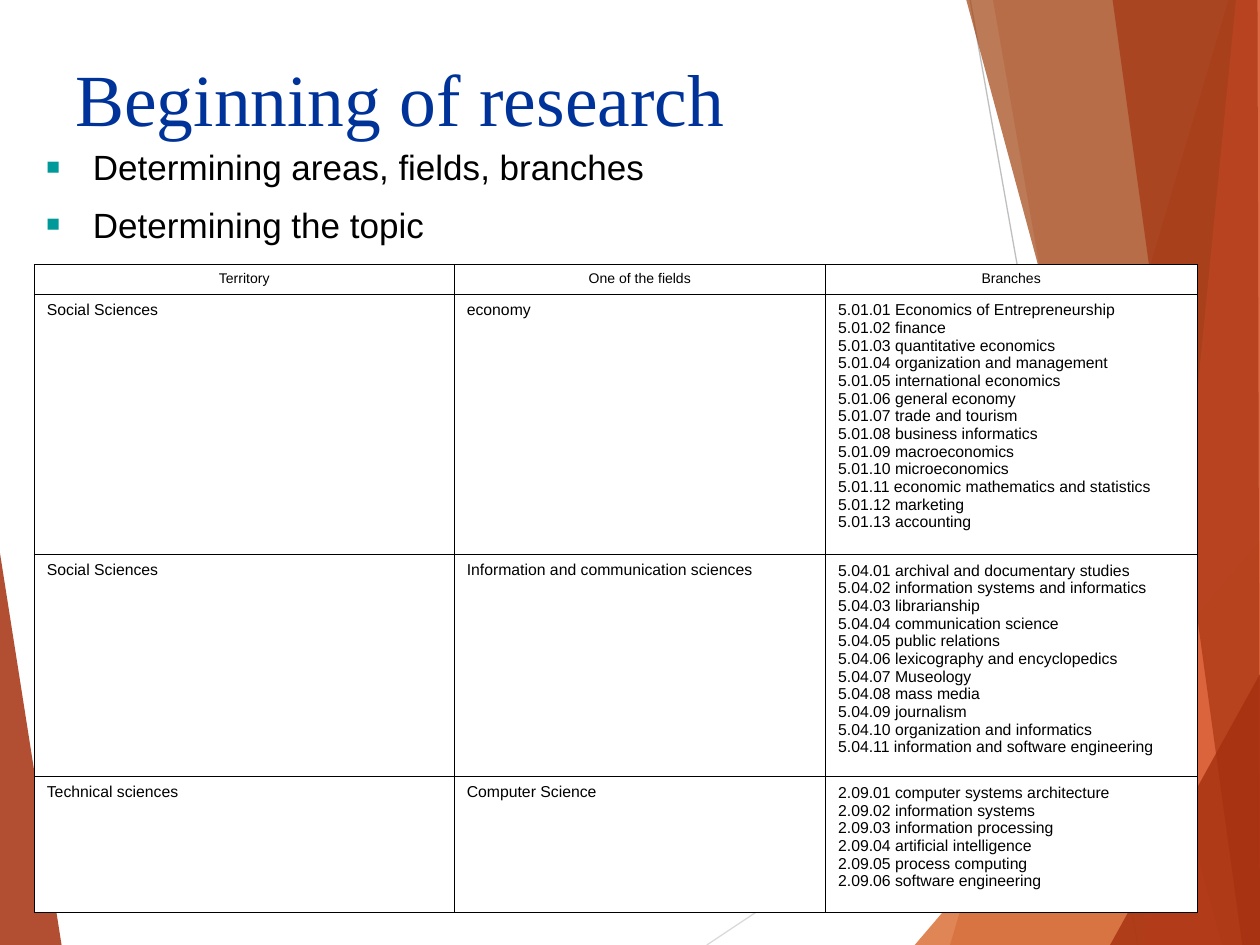
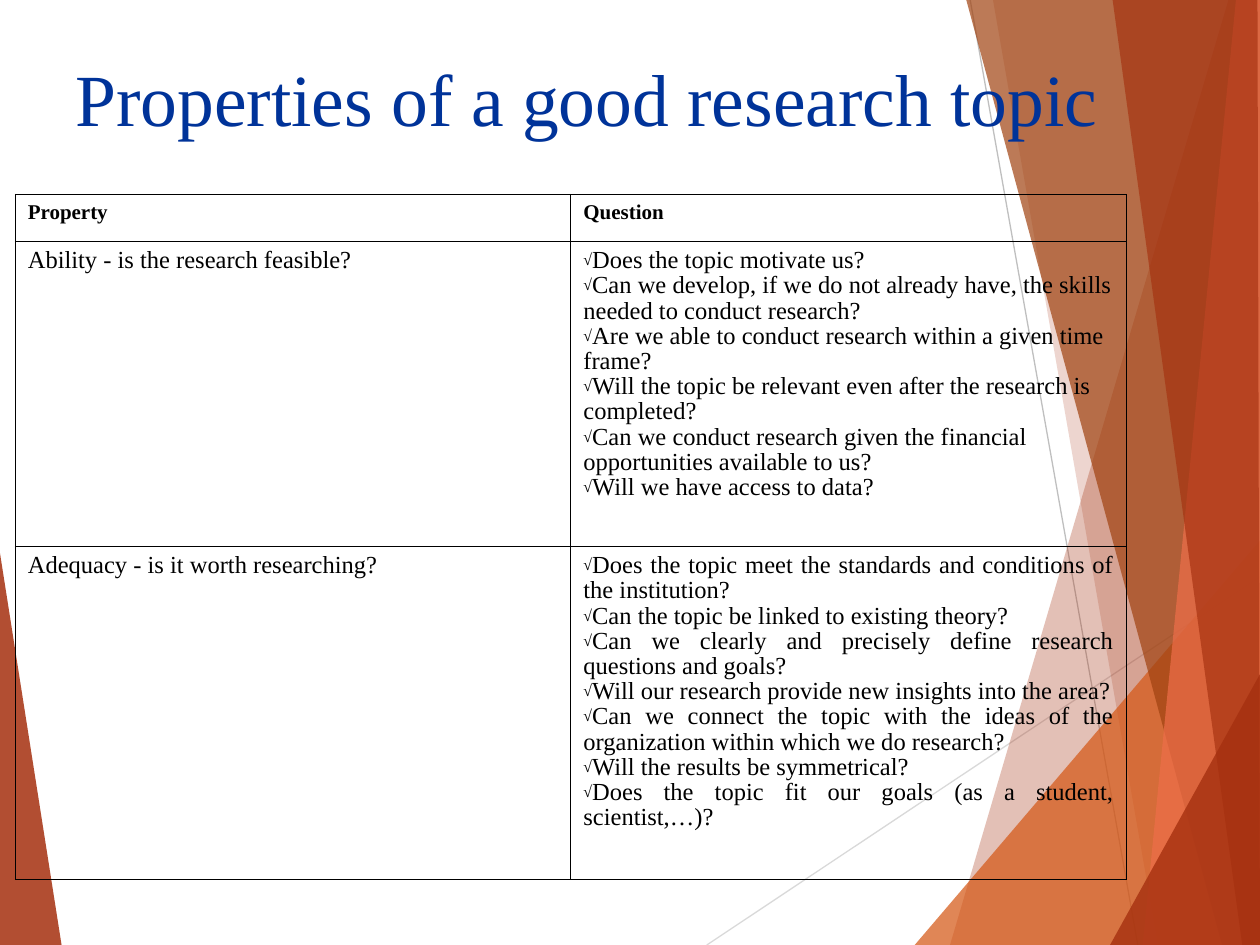
from dataclasses import dataclass, field, replace

from lxml.etree import SubElement
from pptx import Presentation
from pptx.dml.color import RGBColor
from pptx.enum.shapes import MSO_CONNECTOR as Connector
from pptx.enum.text import MSO_ANCHOR as Anchor, PP_ALIGN as Align
from pptx.oxml import parse_xml
from pptx.oxml.ns import nsdecls, qn
from pptx.slide import Slide
from pptx.util import Pt

WIDTH, HEIGHT = 720, 540
BLACK, WHITE, NAVY, TEAL = "000000", "FFFFFF", "003399", "009999"
RUST, ORANGE, BROWN, CORAL = "A5300F", "D55816", "A04210", "EE6E4A"
SANS, SERIF = "Arial", "Times New Roman"
BORDER = 0.45


@dataclass(frozen=True)
class Facet:
    points: tuple[tuple[float, float], ...]
    color: str
    opacity: int


@dataclass(frozen=True)
class Ray:
    start: tuple[float, float]
    end: tuple[float, float]
    color: str


@dataclass(frozen=True)
class Bullet:
    char: str
    color: str
    font: str
    indent: float = 0


@dataclass(frozen=True)
class Style:
    font: dict
    color: str = BLACK
    para: dict = field(default_factory=dict)
    bullet: Bullet | None = None


@dataclass(frozen=True)
class Cell:
    lines: list[str]
    style: Style


@dataclass(frozen=True)
class Grid:
    left: float
    top: float
    widths: list[float]
    heights: list[float]
    rows: list[list[Cell]]
    fill: str | None = None


def right_band(top_x: float, bottom_x: float) -> tuple[tuple[float, float], ...]:
    return (top_x, 0), (bottom_x, HEIGHT), (WIDTH, HEIGHT), (WIDTH, 0)


def right_corner(x: float, y: float) -> tuple[tuple[float, float], ...]:
    return (x, HEIGHT), (WIDTH, y), (WIDTH, HEIGHT)


BACKDROP = [
    Facet(((0, 316), (35.2, HEIGHT), (0, HEIGHT)), RUST, 85),
    Ray((403.9, HEIGHT), (WIDTH, 329.5), "D9D9D9"),
    Ray((554.4, 0), (650.2, HEIGHT), "BFBFBF"),
    Facet(right_band(702, 542.9), RUST, 30),
    Facet(right_band(567.4, 661.7), RUST, 20),
    Facet(right_corner(522.7, 308.9), ORANGE, 72),
    Facet(right_band(552.2, 698.4), BROWN, 70),
    Facet(right_band(706.3, 653), CORAL, 70),
    Facet(((635.8, 0), (709.9, HEIGHT), (WIDTH, HEIGHT), (718.6, 0)), RUST, 65),
    Facet(right_corner(634.3, 385.2), RUST, 80),
]

TITLE = Style({"name": SERIF, "size": Pt(42)}, NAVY)
POINT = Style({"name": SANS, "size": Pt(20)}, para={"space_before": Pt(9)},
              bullet=Bullet("■", TEAL, SANS, 26.64))

BRANCH = Style({"name": SANS, "size": Pt(9)})
AREA = replace(BRANCH, para={"line_spacing": 0.94})
AREA_HEAD = Style({"name": SANS, "size": Pt(8)},
                  para={"line_spacing": 0.94, "alignment": Align.CENTER})

JUSTIFIED = {"line_spacing": 0.93, "alignment": Align.JUSTIFY}
PROPERTY = Style({"name": SERIF, "size": Pt(14)}, para=JUSTIFIED)
PROPERTY_HEAD = Style({"name": SERIF, "size": Pt(12), "bold": True}, para=JUSTIFIED)
QUESTION = replace(PROPERTY, bullet=Bullet("√", BLACK, SERIF))
QUESTION_LEFT = replace(QUESTION, para={"line_spacing": 0.93})

AREAS = [
    ("Social Sciences", "economy", "5.01", [
        "Economics of Entrepreneurship", "finance", "quantitative economics",
        "organization and management", "international economics",
        "general economy", "trade and tourism", "business informatics",
        "macroeconomics", "microeconomics",
        "economic mathematics and statistics", "marketing", "accounting"]),
    ("Social Sciences", "Information and communication sciences", "5.04", [
        "archival and documentary studies",
        "information systems and informatics", "librarianship",
        "communication science", "public relations",
        "lexicography and encyclopedics", "Museology", "mass media",
        "journalism", "organization and informatics",
        "information and software engineering"]),
    ("Technical sciences", "Computer Science", "2.09", [
        "computer systems architecture", "information systems",
        "information processing", "artificial intelligence",
        "process computing", "software engineering"]),
]

PROPERTIES = [
    ("Ability - is the research feasible?", QUESTION_LEFT, [
        "Does the topic motivate us?",
        "Can we develop, if we do not already have, the skills needed to conduct research?",
        "Are we able to conduct research within a given time frame?",
        "Will the topic be relevant even after the research is completed?",
        "Can we conduct research given the financial opportunities available to us?",
        "Will we have access to data?"]),
    ("Adequacy - is it worth researching?", QUESTION, [
        "Does the topic meet the standards and conditions of the institution?",
        "Can the topic be linked to existing theory?",
        "Can we clearly and precisely define research questions and goals?",
        "Will our research provide new insights into the area?",
        "Can we connect the topic with the ideas of the organization within which we do research?",
        "Will the results be symmetrical?",
        "Does the topic fit our goals (as a student, scientist,…)?"]),
]


def rgb(color: str) -> RGBColor:
    return RGBColor.from_string(color)


def set_all(target, values: dict) -> None:
    for name, value in values.items():
        setattr(target, name, value)


def draw_facet(s: Slide, facet: Facet) -> None:
    first, *rest = [(Pt(x), Pt(y)) for x, y in facet.points]
    builder = s.shapes.build_freeform(*first)
    builder.add_line_segments(rest, close=True)
    sp = builder.convert_to_shape()
    sp.shadow.inherit = False
    sp.line.fill.background()
    sp.fill.solid()
    sp.fill.fore_color.rgb = rgb(facet.color)
    color = sp.fill._xPr.find(f".//{qn('a:srgbClr')}")
    SubElement(color, qn("a:alpha"), val=str(facet.opacity * 1000))


def draw_ray(s: Slide, ray: Ray) -> None:
    ends = [Pt(v) for v in (*ray.start, *ray.end)]
    sp = s.shapes.add_connector(Connector.STRAIGHT, *ends)
    sp.line.width = Pt(0.75)
    sp.line.color.rgb = rgb(ray.color)
    SubElement(sp._element.spPr, qn("a:effectLst"))


def add_bullet(p, bullet: Bullet) -> None:
    pPr = p._p.get_or_add_pPr()
    pPr.set("marL", str(Pt(bullet.indent)))
    pPr.set("indent", str(-Pt(bullet.indent)))
    color = SubElement(pPr, qn("a:buClr"))
    SubElement(color, qn("a:srgbClr"), val=bullet.color)
    SubElement(pPr, qn("a:buSzPct"), val="65000")
    SubElement(pPr, qn("a:buFont"), typeface=bullet.font)
    SubElement(pPr, qn("a:buChar"), char=bullet.char)


def write(tf, lines: list[str], style: Style) -> None:
    for i, line in enumerate(lines):
        p = tf.add_paragraph() if i else tf.paragraphs[0]
        set_all(p, style.para)
        if style.bullet:
            add_bullet(p, style.bullet)
        r = p.add_run()
        r.text = line
        set_all(r.font, style.font)
        r.font.color.rgb = rgb(style.color)


def add_text(s: Slide, box: tuple[float, ...], inset_top: float,
             lines: list[str], style: Style) -> None:
    tf = s.shapes.add_textbox(*[Pt(v) for v in box]).text_frame
    set_all(tf, {"word_wrap": True, "margin_top": Pt(inset_top),
                 "vertical_anchor": Anchor.TOP})
    write(tf, lines, style)


def add_borders(cell) -> None:
    tcPr = cell._tc.get_or_add_tcPr()
    for i, side in enumerate("LRTB"):
        tcPr.insert(i, parse_xml(
            f'<a:ln{side} {nsdecls("a")} w="{Pt(BORDER)}"><a:solidFill>'
            f'<a:srgbClr val="{BLACK}"/></a:solidFill></a:ln{side}>'))


def add_grid(s: Slide, grid: Grid) -> None:
    frame = s.shapes.add_table(
        len(grid.rows), len(grid.widths), Pt(grid.left), Pt(grid.top),
        Pt(sum(grid.widths)), Pt(sum(grid.heights)))
    table = frame.table
    set_all(table, {"first_row": False, "horz_banding": False})
    for column, width in zip(table.columns, grid.widths):
        column.width = Pt(width)
    for row, height, cells in zip(table.rows, grid.heights, grid.rows):
        row.height = Pt(height)
        for cell, content in zip(row.cells, cells):
            set_all(cell, {"margin_left": Pt(7.2), "margin_right": Pt(7.2),
                           "margin_top": Pt(4.3), "margin_bottom": Pt(3.6)})
            if grid.fill:
                cell.fill.solid()
                cell.fill.fore_color.rgb = rgb(grid.fill)
            else:
                cell.fill.background()
            add_borders(cell)
            write(cell.text_frame, content.lines, content.style)


def new_slide(prs, title: str) -> Slide:
    s = prs.slides.add_slide(prs.slide_layouts[6])
    s.background.fill.solid()
    s.background.fill.fore_color.rgb = rgb(WHITE)
    for part in BACKDROP:
        if isinstance(part, Facet):
            draw_facet(s, part)
        else:
            draw_ray(s, part)
    add_text(s, (36, 21.6, 648, 90), 8.4, [title], TITLE)
    return s


def areas_grid() -> Grid:
    rows = [[Cell([head], AREA_HEAD)
             for head in ("Territory", "One of the fields", "Branches")]]
    for territory, science, code, branches in AREAS:
        numbered = [f"{code}.{n:02} {name}" for n, name in enumerate(branches, 1)]
        rows.append([Cell([territory], AREA), Cell([science], AREA),
                     Cell(numbered, BRANCH)])
    return Grid(19.6, 151.2, [240, 212.2, 212.2], [16, 139, 118.8, 77.8], rows, WHITE)


def properties_grid() -> Grid:
    rows = [[Cell([head], PROPERTY_HEAD) for head in ("Property", "Question")]]
    for name, style, questions in PROPERTIES:
        rows.append([Cell([name], PROPERTY), Cell(questions, style)])
    return Grid(8.7, 111, [317.5, 317.5], [26.8, 174.3, 190.4], rows)


def main() -> None:
    prs = Presentation()
    set_all(prs, {"slide_width": Pt(WIDTH), "slide_height": Pt(HEIGHT)})

    s = new_slide(prs, "Beginning of research")
    add_text(s, (19.4, 77, 648, 356.4), 6,
             ["Determining areas, fields, branches", "Determining the topic"], POINT)
    add_grid(s, areas_grid())

    s = new_slide(prs, "Properties of a good research topic")
    add_grid(s, properties_grid())

    prs.save("out.pptx")


if __name__ == "__main__":
    main()
